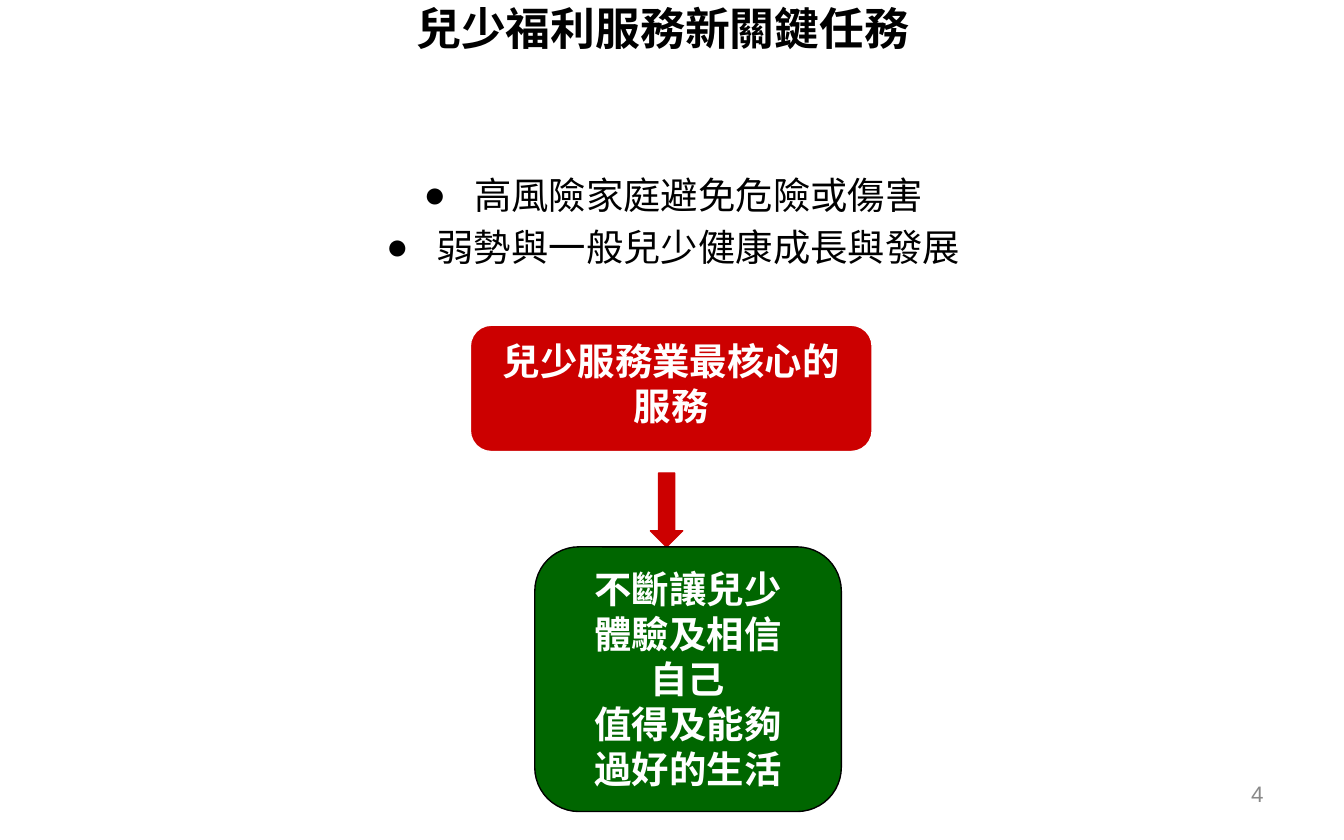
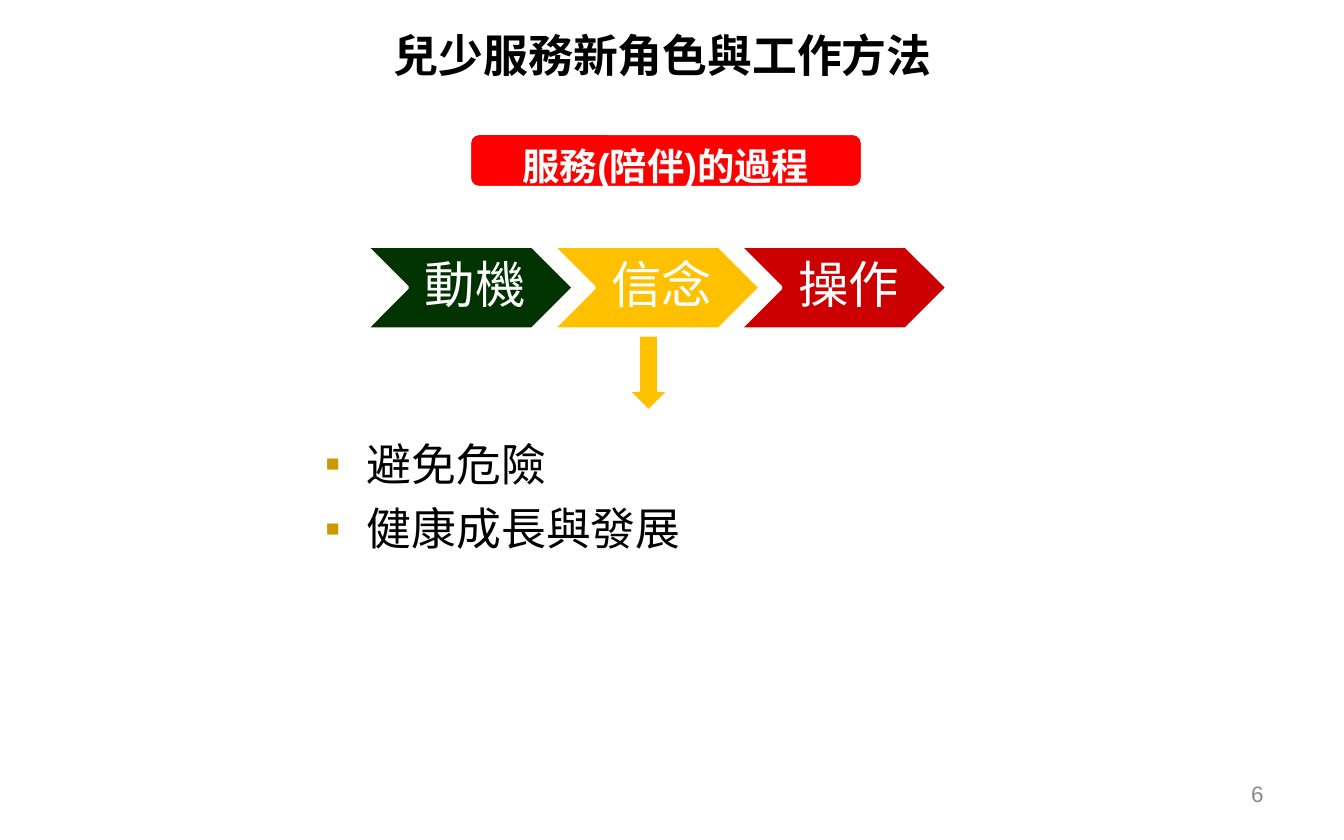
import pptx
import pptx.util
import pptx.dml.color
import pptx.enum.shapes
import pptx.enum.text
import pptx.oxml.ns
import lxml.etree

Pt = pptx.util.Pt
SHAPE = pptx.enum.shapes.MSO_SHAPE
ALIGN = pptx.enum.text.PP_ALIGN
ANCHOR = pptx.enum.text.MSO_ANCHOR

HUES = {
    "black": "000000", "white": "FFFFFF", "grey": "898989",
    "red": "CC0000", "bright": "FF0000", "green": "006600",
    "dark": "003300", "amber": "FFC000", "gold": "CC9900",
}
ARIAL, NOTO = "Arial", "Noto Sans CJK SC"
STYLES = {
    "title": {"size": Pt(24), "bold": True, "name": ARIAL, "hue": "black"},
    "goal": {"size": Pt(20), "name": ARIAL, "hue": "black"},
    "box": {"size": Pt(20), "bold": True, "name": ARIAL, "hue": "white"},
    "step": {"size": Pt(27), "name": ARIAL, "hue": "white"},
    "result": {"size": Pt(24), "name": NOTO, "hue": "black"},
    "page": {"size": Pt(12), "name": ARIAL, "hue": "grey"},
}

TASK = "兒少福利服務新關鍵任務"
GOALS = ["高風險家庭避免危險或傷害", "弱勢與一般兒少健康成長與發展"]
CORE = ["兒少服務業最核心的服務"]
BELIEF = ["不斷讓兒少", "體驗及相信", "自己", "值得及能夠", "過好的生活"]
ROLE = "兒少服務新角色與工作方法"
COURSE = ["服務(陪伴)的過程"]
STEPS = [("動機", "dark"), ("信念", "amber"), ("操作", "red")]
RESULTS = ["避免危險", "健康成長與發展"]

STEP_LEFT, STEP_TOP, STEP_WIDE, STEP_HIGH, STEP_GAP = 195.84, 131.76, 111.6, 44.64, 100.08


def color(hue):
    return pptx.dml.color.RGBColor.from_string(HUES[hue])


def bullet(par, mark, hue, indent):
    props = par._p.get_or_add_pPr()
    props.set("marL", str(Pt(indent)))
    props.set("indent", str(-Pt(indent)))
    tag = pptx.oxml.ns.qn
    fill = lxml.etree.SubElement(props, tag("a:buClr"))
    lxml.etree.SubElement(fill, tag("a:srgbClr"), val=HUES[hue])
    lxml.etree.SubElement(props, tag("a:buFont"), typeface=ARIAL)
    lxml.etree.SubElement(props, tag("a:buChar"), char=mark)


def write(shape, lines, style, align=ALIGN.CENTER, mark=None, before=0, space=None, **frame):
    text = shape.text_frame
    for key, value in {"word_wrap": True, "vertical_anchor": ANCHOR.TOP, **frame}.items():
        setattr(text, key, value)
    for i, line in enumerate(lines):
        par = text.add_paragraph() if i else text.paragraphs[0]
        par.alignment = align
        if space:
            par.line_spacing = space
        if i and before:
            par.space_before = Pt(before)
        if mark:
            bullet(par, *mark)
        run = par.add_run()
        run.text = line
        for key, value in STYLES[style].items():
            if key == "hue":
                run.font.color.rgb = color(value)
            else:
                setattr(run.font, key, value)


def label(slide, area, lines, style, **look):
    write(slide.shapes.add_textbox(*map(Pt, area)), lines, style, **look)


def block(slide, kind, area, fill, line, width=0.75):
    shape = slide.shapes.add_shape(kind, *map(Pt, area))
    shape.shadow.inherit = False
    shape.fill.solid()
    shape.fill.fore_color.rgb = color(fill)
    shape.line.color.rgb = color(line)
    shape.line.width = Pt(width)
    return shape


def start(deck, title, page, foot=3.6):
    slide = deck.slides.add_slide(deck.slide_layouts[6])
    label(slide, (31, 8, 648, 42.5), [title], "title",
          vertical_anchor=ANCHOR.MIDDLE, margin_bottom=Pt(foot))
    label(slide, (516.25, 409.7, 167.75, 31), [page], "page",
          align=ALIGN.RIGHT, vertical_anchor=ANCHOR.MIDDLE)
    return slide


def tasks(deck):
    slide = start(deck, TASK, "4", foot=32)
    label(slide, (36.7, 88.5, 648, 68.4), GOALS, "goal",
          mark=("●", "black", 27), before=4)
    core = block(slide, SHAPE.ROUNDED_RECTANGLE, (252, 174.25, 215.25, 67.7), "red", "white")
    write(core, CORE, "box")
    block(slide, SHAPE.DOWN_ARROW, (348.5, 253.4, 17.3, 39.6), "red", "red")
    belief = block(slide, SHAPE.ROUNDED_RECTANGLE, (286.5, 293, 164.2, 141.8), "green", "black")
    write(belief, BELIEF, "box")


def roles(deck):
    slide = start(deck, ROLE, "6")
    for i, (name, hue) in enumerate(STEPS):
        area = STEP_LEFT + i * STEP_GAP, STEP_TOP, STEP_WIDE, STEP_HIGH
        step = block(slide, SHAPE.CHEVRON, area, hue, "white", 2)
        write(step, [name], "step", space=0.9, vertical_anchor=ANCHOR.MIDDLE,
              word_wrap=False, margin_left=Pt(8.6), margin_right=Pt(2.9),
              margin_top=Pt(2.9), margin_bottom=Pt(2.9))
    course = block(slide, SHAPE.ROUNDED_RECTANGLE, (252, 72, 209.5, 28), "bright", "white")
    write(course, COURSE, "box")
    block(slide, SHAPE.DOWN_ARROW, (337.5, 180, 20, 39.6), "amber", "white")
    label(slide, (167, 224.6, 380, 72.7), RESULTS, "result", align=ALIGN.LEFT,
          mark=("▪", "gold", 22.5), space=1.2,
          auto_size=pptx.enum.text.MSO_AUTO_SIZE.SHAPE_TO_FIT_TEXT)


def main():
    deck = pptx.Presentation()
    deck.slide_width, deck.slide_height = Pt(720), Pt(450)
    tasks(deck)
    roles(deck)
    deck.save("out.pptx")


if __name__ == "__main__":
    main()
